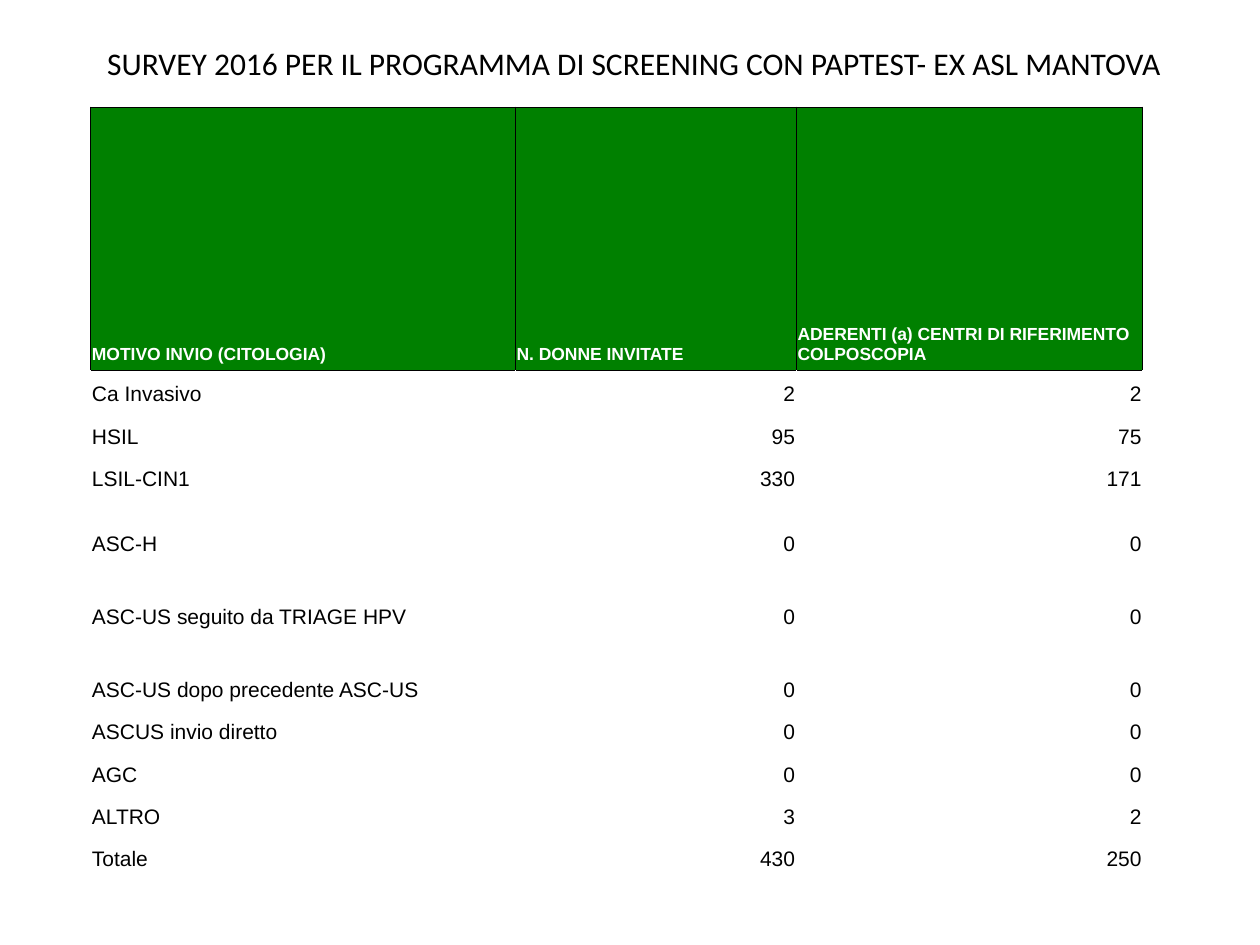
from pptx import Presentation
from pptx.dml.color import RGBColor
from pptx.enum import text
from pptx.oxml import parse_xml
from pptx.oxml.ns import nsdecls
from pptx.util import Inches, Pt

BLACK = RGBColor(0x00, 0x00, 0x00)
WHITE = RGBColor(0xFF, 0xFF, 0xFF)
GREEN = RGBColor(0x00, 0x80, 0x00)

TITLE = "SURVEY 2016 PER IL PROGRAMMA DI SCREENING CON PAPTEST- EX ASL MANTOVA"
HEAD = ("MOTIVO INVIO (CITOLOGIA)", "N. DONNE INVITATE",
        "ADERENTI (a) CENTRI DI RIFERIMENTO COLPOSCOPIA")
DATA = [
    ("Ca Invasivo", 2, 2),
    ("HSIL", 95, 75),
    ("LSIL-CIN1", 330, 171),
    ("ASC-H", 0, 0),
    ("ASC-US seguito da TRIAGE HPV", 0, 0),
    ("ASC-US dopo precedente ASC-US", 0, 0),
    ("ASCUS invio diretto", 0, 0),
    ("AGC", 0, 0),
    ("ALTRO", 3, 2),
    ("Totale", 430, 250),
]
WIDTHS = (3.37, 2.23, 2.75)
HEAD_H, ROW_H = 2.09, 0.335
TALL = {4: 0.52, 5: 0.58, 6: 0.58}


def style(par, font, size, color, bold=False):
    for run in par.runs:
        run.font.name = font
        run.font.size = Pt(size)
        run.font.bold = bold
        run.font.color.rgb = color


def border(cell, sides):
    """Draw thin black lines on the given sides, in the order L, R, T, B."""
    for side in sides:
        cell._tc.get_or_add_tcPr().append(parse_xml(
            f'<a:ln{side} {nsdecls("a")} w="6350"><a:solidFill>'
            f'<a:srgbClr val="{BLACK}"/></a:solidFill></a:ln{side}>'))


def fill_cell(cell, value, row, col):
    cell.margin_left = cell.margin_right = cell.margin_top = Inches(0.01)
    cell.margin_bottom = Inches(0.05)
    cell.vertical_anchor = text.MSO_ANCHOR.BOTTOM
    cell.text_frame.text = str(value)
    par = cell.text_frame.paragraphs[0]
    if row == 0:
        border(cell, "LRTB")
        cell.fill.solid()
        cell.fill.fore_color.rgb = GREEN
        style(par, "Arial", 10, WHITE, True)
        return
    if row == 1:
        border(cell, "T")
    cell.fill.background()
    style(par, "Arial", 12, BLACK)
    if col:
        par.alignment = text.PP_ALIGN.RIGHT


def add_title(slide):
    title = slide.shapes.title
    title.left, title.top = Inches(0.75), Inches(0.3)
    title.width, title.height = Inches(8.75), Inches(0.4)
    frame = title.text_frame
    frame.text = TITLE
    frame.word_wrap = True
    frame.auto_size = text.MSO_AUTO_SIZE.NONE
    frame.vertical_anchor = text.MSO_ANCHOR.TOP
    par = frame.paragraphs[0]
    par.alignment = text.PP_ALIGN.LEFT
    style(par, "Calibri", 18, BLACK)


def add_data(slide):
    rows = [HEAD] + DATA
    highs = [HEAD_H] + [TALL.get(i, ROW_H) for i in range(1, len(rows))]
    table = slide.shapes.add_table(
        len(rows), len(HEAD), Inches(0.72), Inches(0.85),
        Inches(sum(WIDTHS)), Inches(sum(highs))).table
    table.first_row = table.horz_banding = False
    for col, width in zip(table.columns, WIDTHS):
        col.width = Inches(width)
    for r, (values, high) in enumerate(zip(rows, highs)):
        table.rows[r].height = Inches(high)
        for c, value in enumerate(values):
            fill_cell(table.cell(r, c), value, r, c)


def main():
    deck = Presentation()
    deck.slide_width, deck.slide_height = Inches(10), Inches(7.5)
    slide = deck.slides.add_slide(deck.slide_layouts[5])
    add_title(slide)
    add_data(slide)
    deck.save("out.pptx")


if __name__ == "__main__":
    main()
